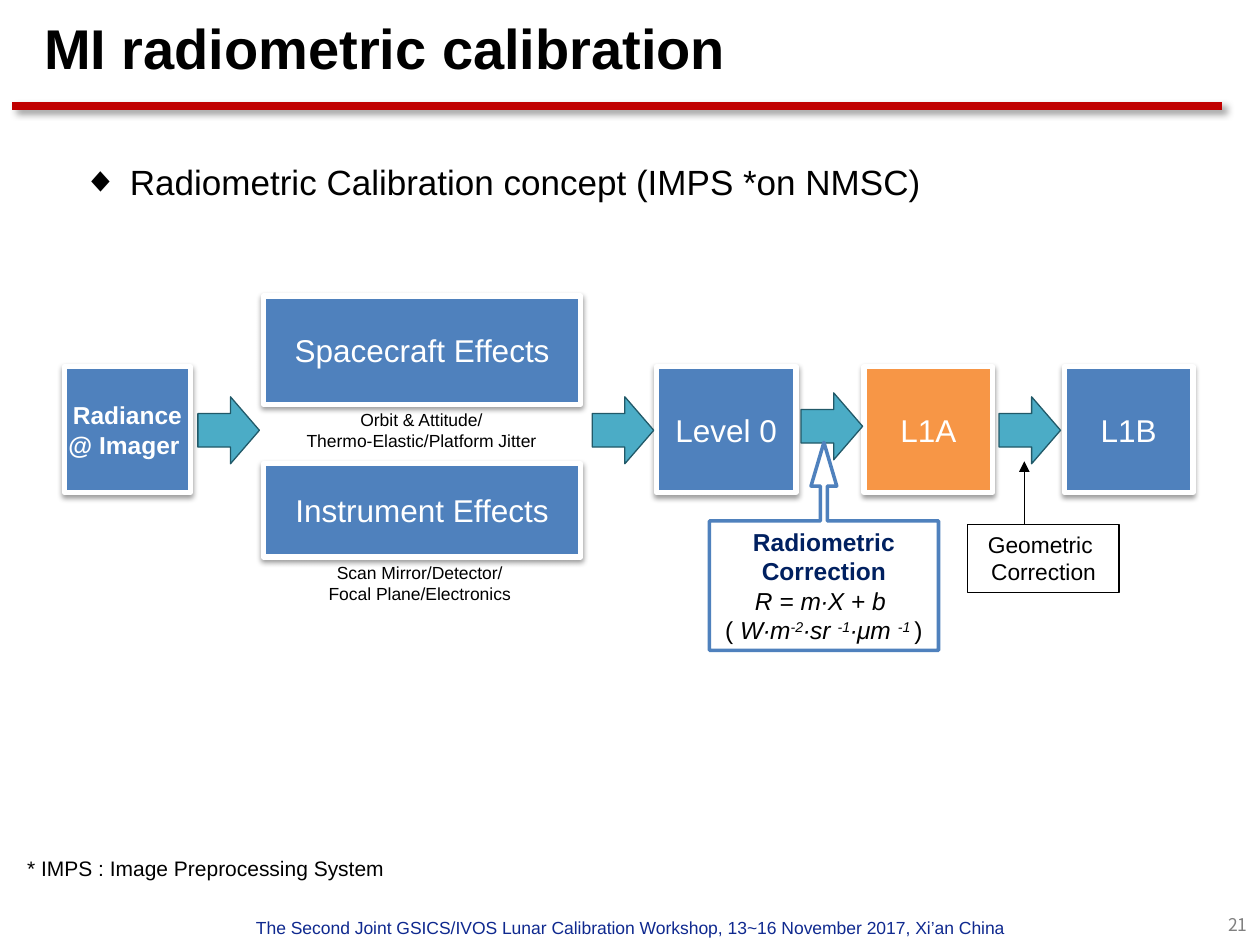
from lxml.etree import SubElement
from pptx import Presentation
from pptx.dml.color import RGBColor
from pptx.enum.shapes import MSO_CONNECTOR, MSO_SHAPE
from pptx.enum.text import MSO_ANCHOR, PP_ALIGN
from pptx.oxml.ns import qn
from pptx.util import Cm, Pt

BLACK = RGBColor(0x00, 0x00, 0x00)
WHITE = RGBColor(0xFF, 0xFF, 0xFF)
GRAY = RGBColor(0x80, 0x80, 0x80)
RED = RGBColor(0xC0, 0x00, 0x00)
BLUE = RGBColor(0x4F, 0x81, 0xBD)
ORANGE = RGBColor(0xF7, 0x96, 0x46)
TEAL = RGBColor(0x4B, 0xAC, 0xC6)
DARK_TEAL = RGBColor(0x21, 0x59, 0x68)
NAVY = RGBColor(0x00, 0x20, 0x60)
FOOTER_BLUE = RGBColor(0x0F, 0x29, 0x8F)

BLOCK_SIDE = 2.54
ROW_TOP = 7.39


def set_shadow(shape, alpha=None, blur=0, distance=0, angle=0):
    properties = shape._element.spPr
    for old in properties.findall(qn("a:effectLst")):
        properties.remove(old)
    effects = SubElement(properties, qn("a:effectLst"))
    if alpha is None:
        return
    shadow = SubElement(effects, qn("a:outerShdw"), blurRad=str(Pt(blur)), dist=str(Pt(distance)),
                        dir=str(angle * 60000), algn="t", rotWithShape="0")
    color = SubElement(shadow, qn("a:srgbClr"), val=str(BLACK))
    SubElement(color, qn("a:alpha"), val=str(alpha * 1000))


def add_span(para, text, size, color=BLACK, bold=False, italic=False, raised=False, font="Arial"):
    span = para.add_run()
    span.text = text
    span.font.name = font
    span.font.size = Pt(size)
    span.font.color.rgb = color
    span.font.bold = bold
    span.font.italic = italic
    if raised:
        span._r.get_or_add_rPr().set("baseline", "30000")


def next_para(frame, align):
    para = frame.paragraphs[0]
    if para.runs:
        para = frame.add_paragraph()
    para.alignment = align
    return para


def fill_lines(frame, lines, size, align=PP_ALIGN.CENTER, **style):
    for line in lines:
        add_span(next_para(frame, align), line, size, **style)


def add_label(page, left, top, width, height, lines, size, align=PP_ALIGN.LEFT,
              wrap=True, anchor=MSO_ANCHOR.TOP, **style):
    box = page.shapes.add_textbox(Cm(left), Cm(top), Cm(width), Cm(height))
    box.text_frame.word_wrap = wrap
    box.text_frame.vertical_anchor = anchor
    fill_lines(box.text_frame, lines, size, align, **style)
    return box


def add_bullet(page, text):
    box = add_label(page, 1.42, 3.12, 22.4, 1.19, [text], 20)
    para = box.text_frame.paragraphs[0]
    para.space_before = Pt(4)
    para.space_after = Pt(12)
    properties = para._p.get_or_add_pPr()
    properties.set("marL", str(Cm(0.95)))
    properties.set("indent", str(Cm(-0.95)))
    SubElement(properties, qn("a:buFont"), typeface="Arial")
    SubElement(properties, qn("a:buChar"), char="◆")


def add_figure(page, kind, left, top, width, height, fill, line, weight):
    shape = page.shapes.add_shape(kind, Cm(left), Cm(top), Cm(width), Cm(height))
    shape.shadow.inherit = False
    if fill is None:
        shape.fill.background()
    else:
        shape.fill.solid()
        shape.fill.fore_color.rgb = fill
    shape.line.color.rgb = line
    shape.line.width = Pt(weight)
    return shape


def add_block(page, left, top, width, height, lines, fill=BLUE, size=18, bold=False):
    block = add_figure(page, MSO_SHAPE.RECTANGLE, left, top, width, height, fill, WHITE, 3)
    set_shadow(block, 38, 3.1, 1.6, 90)
    block.text_frame.word_wrap = False
    block.text_frame.vertical_anchor = MSO_ANCHOR.MIDDLE
    fill_lines(block.text_frame, lines, size, color=WHITE, bold=bold)


def add_flow_arrow(page, left, top):
    arrow = add_figure(page, MSO_SHAPE.RIGHT_ARROW, left, top, 1.24, 1.35, TEAL, DARK_TEAL, 0.75)
    arrow.adjustments[1] = 0.47


def add_line(page, start, end, color, weight):
    line = page.shapes.add_connector(MSO_CONNECTOR.STRAIGHT, Cm(start[0]), Cm(start[1]),
                                     Cm(end[0]), Cm(end[1]))
    line.line.color.rgb = color
    line.line.width = Pt(weight)
    set_shadow(line)
    return line


def add_geometric_note(page):
    pointer = add_line(page, (20.65, 10.57), (20.65, 9.3), BLACK, 0.75)
    SubElement(pointer.line._get_or_add_ln(), qn("a:tailEnd"), type="triangle")
    note = add_figure(page, MSO_SHAPE.RECTANGLE, 19.51, 10.57, 3.05, 1.37, None, BLACK, 0.75)
    note.text_frame.word_wrap = True
    note.text_frame.vertical_anchor = MSO_ANCHOR.TOP
    fill_lines(note.text_frame, ["Geometric ", "Correction"], 13)


def add_radiometric_callout(page):
    callout = add_figure(page, MSO_SHAPE.UP_ARROW_CALLOUT, 14.3, 8.92, 4.62, 4.19, WHITE, BLUE, 2)
    for index, value in enumerate((0.034, 0.062, 0.21, 0.622)):
        callout.adjustments[index] = value
    frame = callout.text_frame
    frame.word_wrap = True
    frame.vertical_anchor = MSO_ANCHOR.MIDDLE
    fill_lines(frame, ["Radiometric", "Correction"], 14, color=NAVY, bold=True)
    fill_lines(frame, ["R = m∙X + b "], 14, italic=True)
    units = next_para(frame, PP_ALIGN.CENTER)
    add_span(units, "( ", 14)
    for unit, power in (("W∙m", "-2"), ("∙sr ", "-1"), ("∙μm ", "-1 ")):
        add_span(units, unit, 14, italic=True)
        add_span(units, power, 14, italic=True, raised=True)
    add_span(units, ")", 14)


def main():
    deck = Presentation()
    deck.slide_width = Cm(25.4)
    deck.slide_height = Cm(19.05)
    page = deck.slides.add_slide(deck.slide_layouts[6])

    rule = add_line(page, (0.25, 2.13), (24.64, 2.13), RED, 4.5)
    set_shadow(rule, 40, 4, 3, 45)
    add_label(page, 23.85, 18.31, 1.55, 0.69, ["21"], 10, PP_ALIGN.RIGHT,
              color=GRAY, font="Noto Sans CJK KR")
    add_label(page, 0, 18.36, 25.4, 0.69,
              ["The Second Joint GSICS/IVOS Lunar Calibration Workshop, 13~16 November 2017, Xi’an China"],
              10, PP_ALIGN.CENTER, color=FOOTER_BLUE)
    add_label(page, 0.64, 0.2, 21.89, 1.52, ["MI radiometric calibration"], 32,
              anchor=MSO_ANCHOR.MIDDLE, bold=True)
    add_bullet(page, "Radiometric Calibration concept (IMPS *on NMSC)")

    add_block(page, 1.3, ROW_TOP, BLOCK_SIDE, BLOCK_SIDE, ["Radiance", "@ Imager "], size=14, bold=True)
    add_block(page, 5.31, 5.97, 6.4, 2.18, ["Spacecraft Effects"])
    add_block(page, 5.31, 9.35, 6.4, 1.88, ["Instrument Effects"])
    add_label(page, 5.51, 8.13, 5.97, 1.12, ["Orbit & Attitude/", "Thermo-Elastic/Platform Jitter"],
              10, PP_ALIGN.CENTER)
    add_label(page, 5.49, 11.2, 5.94, 1.12, ["Scan Mirror/Detector/", "Focal Plane/Electronics"],
              10, PP_ALIGN.CENTER)
    for left, width, level, fill in ((13.23, 2.82, "Level 0", BLUE),
                                     (17.42, 2.59, "L1A", ORANGE),
                                     (21.46, 2.59, "L1B", BLUE)):
        add_block(page, left, ROW_TOP, width, BLOCK_SIDE, [level], fill)

    for left, top in ((3.99, 8), (11.94, 8), (16.15, 7.92), (20.14, 8)):
        add_flow_arrow(page, left, top)
    add_geometric_note(page)
    add_radiometric_callout(page)
    add_label(page, 0.3, 17.12, 7.9, 0.76, ["* IMPS : Image Preprocessing System"], 12, wrap=False)

    deck.save("out.pptx")


if __name__ == "__main__":
    main()
